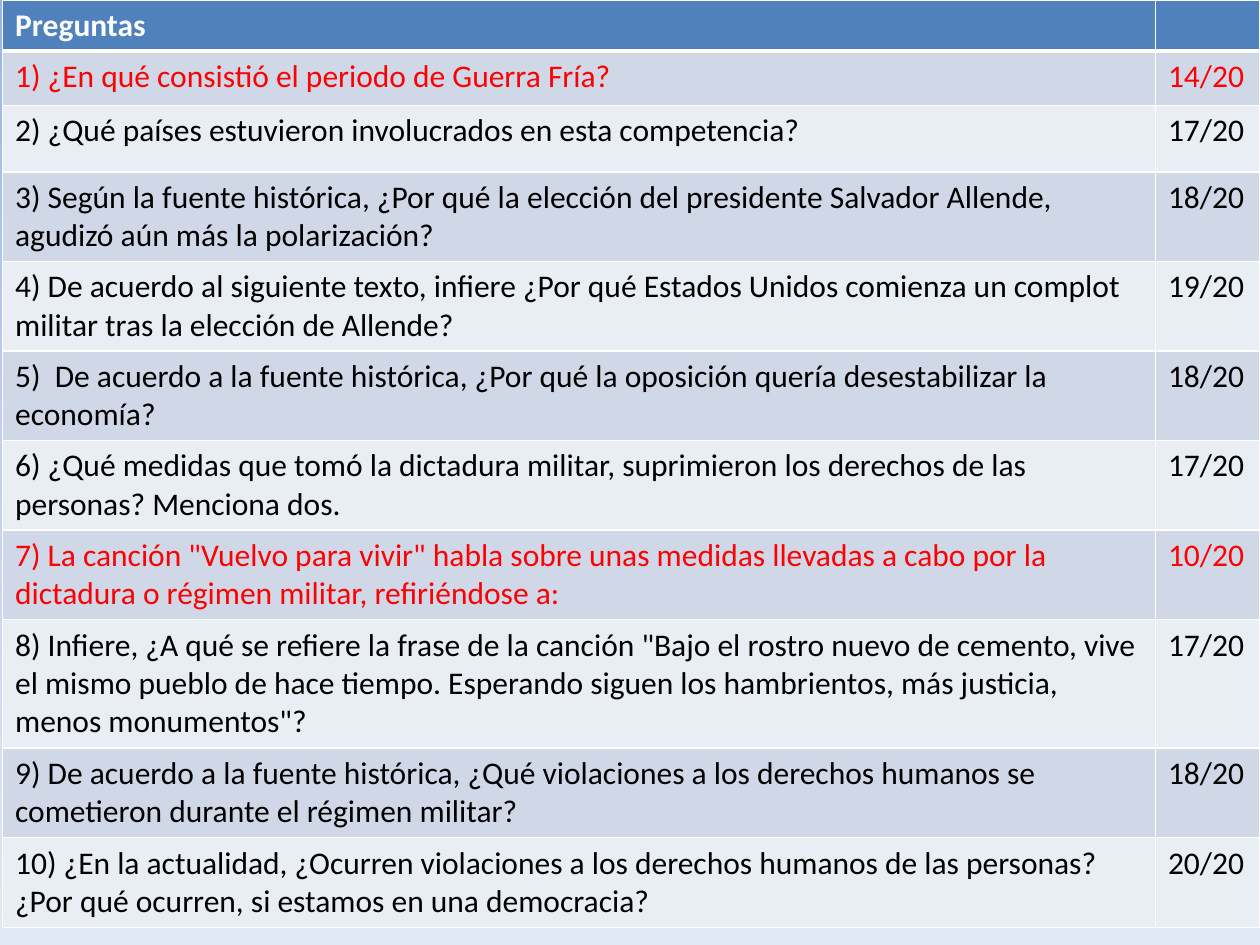
from copy import deepcopy

from lxml.etree import SubElement
from pptx import Presentation
from pptx.dml.color import RGBColor
from pptx.oxml.ns import qn
from pptx.util import Inches, Pt

WHITE, BLACK, RED = "FFFFFF", "000000", "FF0000"
HEADER_BLUE, BANDS = "4F81BD", ("D0D8E8", "E9EDF4")
SKY = ((0, "9AB5E4"), (0.5, "C2D1ED"), (1, "E1E8F5"))
COLUMN_WIDTHS = (9.15, 0.83)
TOTAL = 20
PASS_SCORE = 15  # lower scores are shown in red

# Question, correct answers, row height
QUESTIONS = [
    ("1) ¿En qué consistió el periodo de Guerra Fría?", 14, 0.43),
    ("2) ¿Qué países estuvieron involucrados en esta competencia?", 17, 0.53),
    ("3) Según la fuente histórica, ¿Por qué la elección del presidente "
     "Salvador Allende, agudizó aún más la polarización?", 18, 0.71),
    ("4) De acuerdo al siguiente texto, infiere ¿Por qué Estados Unidos "
     "comienza un complot militar tras la elección de Allende?", 19, 0.71),
    ("5)  De acuerdo a la fuente histórica, ¿Por qué la oposición quería "
     "desestabilizar la economía?", 18, 0.71),
    ("6) ¿Qué medidas que tomó la dictadura militar, suprimieron los "
     "derechos de las personas? Menciona dos.", 17, 0.71),
    ('7) La canción "Vuelvo para vivir" habla sobre unas medidas llevadas '
     "a cabo por la dictadura o régimen militar, refiriéndose a:", 10, 0.71),
    ('8) Infiere, ¿A qué se refiere la frase de la canción "Bajo el rostro '
     "nuevo de cemento, vive el mismo pueblo de hace tiempo. Esperando "
     'siguen los hambrientos, más justicia, menos monumentos"?', 17, 1.02),
    ("9) De acuerdo a la fuente histórica, ¿Qué violaciones a los derechos "
     "humanos se cometieron durante el régimen militar?", 18, 0.71),
    ("10) ¿En la actualidad, ¿Ocurren violaciones a los derechos humanos de "
     "las personas? ¿Por qué ocurren, si estamos en una democracia?", 20, 0.71),
]


def color(hex_code):
    return RGBColor.from_string(hex_code)


def paint_background(slide):
    fill = slide.background.fill
    fill.gradient()
    fill.gradient_angle = 270
    stop_list = next(slide.element.iter(qn("a:gsLst")))
    stop_list.insert(1, deepcopy(stop_list[0]))
    for stop, (position, shade) in zip(fill.gradient_stops, SKY):
        stop.position = position
        stop.color.rgb = color(shade)


def set_borders(cell, **widths):
    """Draw white borders; the lines must come before the cell's fill."""
    properties = cell._tc.get_or_add_tcPr()
    for side in "LRTB":
        line = SubElement(properties, qn(f"a:ln{side}"),
                          w=str(Pt(widths.get(side, 1))))
        solid = SubElement(line, qn("a:solidFill"))
        SubElement(solid, qn("a:srgbClr"), val=WHITE)


def style_cell(cell, text, fill, text_color, bold=False, **borders):
    set_borders(cell, **borders)
    cell.fill.solid()
    cell.fill.fore_color.rgb = color(fill)
    cell.text = text
    font = cell.text_frame.paragraphs[0].font
    font.name, font.size, font.bold = "Calibri", Pt(18), bold
    font.color.rgb = color(text_color)


def add_results_table(slide, left, top, width, height):
    table = slide.shapes.add_table(
        len(QUESTIONS) + 1, len(COLUMN_WIDTHS),
        Inches(left), Inches(top), Inches(width), Inches(height)).table
    for column, column_width in zip(table.columns, COLUMN_WIDTHS):
        column.width = Inches(column_width)

    # Header
    table.rows[0].height = Inches(0.4)
    for cell, title in zip(table.rows[0].cells, ("Preguntas", "")):
        style_cell(cell, title, HEADER_BLUE, WHITE, bold=True, B=3)

    # Questions and scores
    for index, (question, score, row_height) in enumerate(QUESTIONS):
        row = table.rows[index + 1]
        row.height = Inches(row_height)
        text_color = RED if score < PASS_SCORE else BLACK
        top_border = 3 if index == 0 else 1
        for cell, text in zip(row.cells, (question, f"{score}/{TOTAL}")):
            style_cell(cell, text, BANDS[index % 2], text_color, T=top_border)


def main():
    deck = Presentation()
    deck.slide_width, deck.slide_height = Inches(10), Inches(7.5)
    slide = deck.slides.add_slide(deck.slide_layouts[6])
    paint_background(slide)
    add_results_table(slide, 0.02, 0, sum(COLUMN_WIDTHS), 7.25)
    deck.save("out.pptx")


if __name__ == "__main__":
    main()
